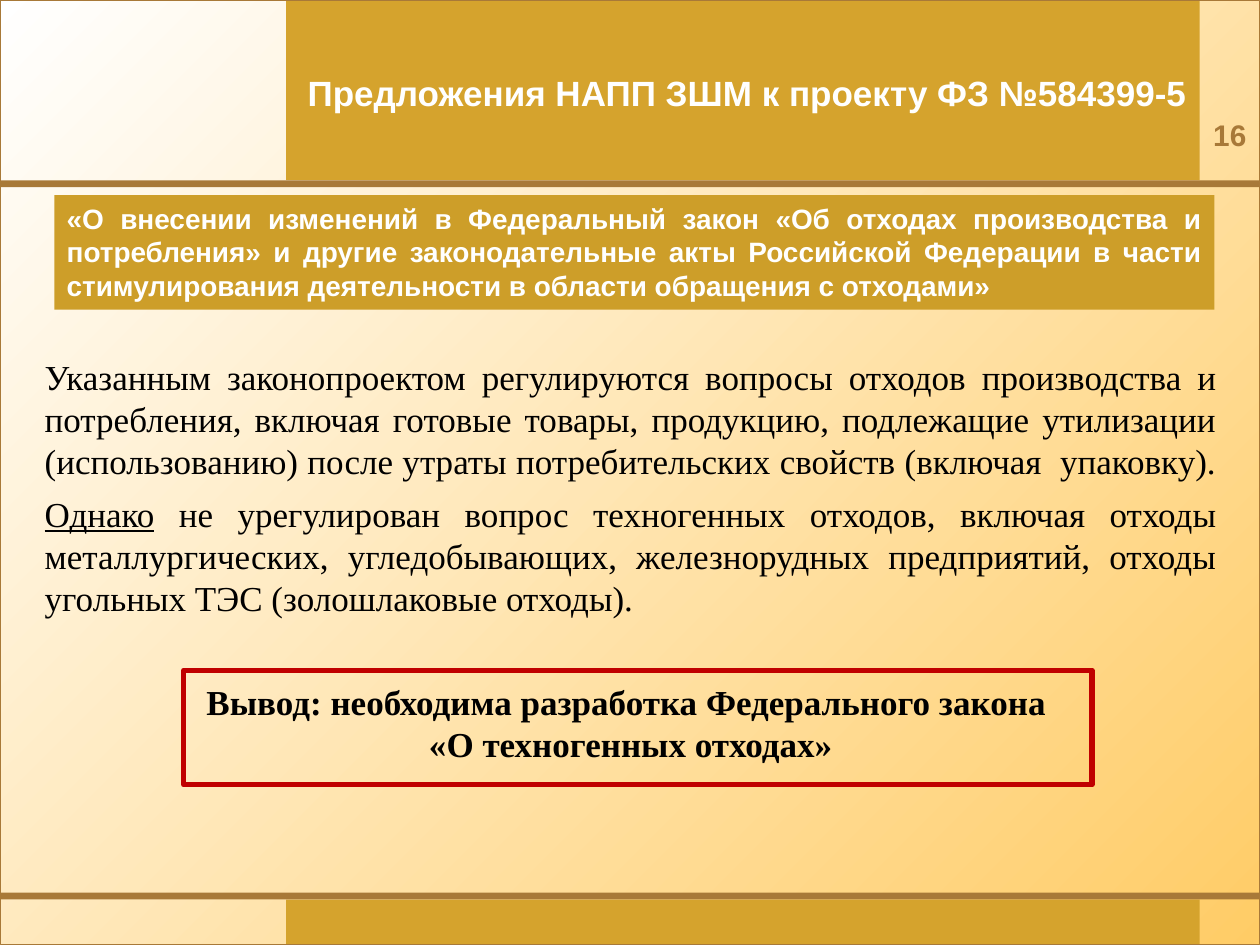
from lxml import etree
from pptx import Presentation
from pptx.dml.color import RGBColor
from pptx.enum.shapes import MSO_SHAPE
from pptx.enum.text import MSO_ANCHOR, MSO_AUTO_SIZE, PP_ALIGN
from pptx.oxml.ns import qn
from pptx.util import Pt

RECT = MSO_SHAPE.RECTANGLE
TOP, MIDDLE, BOTTOM = MSO_ANCHOR.TOP, MSO_ANCHOR.MIDDLE, MSO_ANCHOR.BOTTOM
CENTER, JUSTIFY = PP_ALIGN.CENTER, PP_ALIGN.JUSTIFY
NO_FIT = MSO_AUTO_SIZE.NONE

WIDTH, HEIGHT = 720, 540
GOLD, BROWN, OCHRE = "D5A32D", "A87938", "CD9E29"
WHITE, BLACK, RED = "FFFFFF", "000000", "C00000"
SANS, SERIF = "Arial", "Times New Roman"


def rgb(value):
    return RGBColor.from_string(value)


class Deck:
    """Hold the style and the current slide, and add each kind of element."""

    def __init__(self):
        self.prs = Presentation()
        self.prs.slide_width, self.prs.slide_height = Pt(WIDTH), Pt(HEIGHT)
        self.s = self.prs.slides.add_slide(self.prs.slide_layouts[1])

    def background(self, colors, angle):
        fill = self.s.background.fill
        fill.gradient()
        fill.gradient_angle = angle
        for stop, color, position in zip(fill.gradient_stops, colors, (0, 1)):
            stop.color.rgb, stop.position = rgb(color), position

    def rect(self, box, fill=None, line=None, width=1):
        sp = self.s.shapes.add_shape(RECT, *map(Pt, box))
        sp.shadow.inherit = False
        if fill:
            sp.fill.solid()
            sp.fill.fore_color.rgb = rgb(fill)
        else:
            sp.fill.background()
        if line:
            sp.line.color.rgb, sp.line.width = rgb(line), Pt(width)
        else:
            sp.line.fill.background()
        return sp

    def placeholder(self, index, box):
        sp = self.s.placeholders[index]
        for name, value in zip(("left", "top", "width", "height"), box):
            setattr(sp, name, Pt(value))
        self.s.shapes._spTree.append(sp._element)
        return sp

    def text_box(self, box):
        return self.s.shapes.add_textbox(*map(Pt, box))

    def set_text(self, sp, paragraphs, font, anchor=MIDDLE, margins=(6, 3, 6, 3)):
        tf = sp.text_frame
        tf.word_wrap, tf.auto_size, tf.vertical_anchor = True, NO_FIT, anchor
        for side, value in zip(("left", "top", "right", "bottom"), margins):
            setattr(tf, f"margin_{side}", Pt(value))
        for i, (runs, layout) in enumerate(paragraphs):
            p = tf.add_paragraph() if i else tf.paragraphs[0]
            pPr = p._p.get_or_add_pPr()
            pPr.set("marL", "0")
            pPr.set("indent", "0")
            etree.SubElement(pPr, qn("a:buNone"))
            for name, value in {"space_before": Pt(0), **layout}.items():
                setattr(p, name, value)
            for text, extra in runs:
                r = p.add_run()
                r.text = text
                style = {**font, **extra}
                r.font.color.rgb = rgb(style.pop("color"))
                for name, value in style.items():
                    setattr(r.font, name, value)


def main():
    deck = Deck()
    deck.background((WHITE, "FFCC66"), 315)
    for box, color in (
        ((163.5, 514, 522, 26), GOLD),
        ((163.5, 0, 522, 103), GOLD),
        ((0, 103, WIDTH, 4), BROWN),
        ((0, 510, WIDTH, 4), BROWN),
    ):
        deck.rect(box, color)
    deck.rect((0, 0, WIDTH, HEIGHT), line=BROWN, width=0.5)

    heading = {"name": SANS, "size": Pt(20), "bold": True, "color": WHITE}
    centered = {"alignment": CENTER}
    title = deck.placeholder(0, (167, 0, 520, 106))
    deck.set_text(title, [([("Предложения НАПП ЗШМ к проекту ФЗ №584399-5", {})], centered)], heading)

    number = deck.text_box((685.5, 64, 34.5, 26))
    deck.set_text(number, [([("16", {})], centered)],
                  {**heading, "size": Pt(17), "color": BROWN}, BOTTOM)

    justified = {"alignment": JUSTIFY, "space_after": Pt(6)}
    bold = {"bold": True}
    body = deck.placeholder(1, (19.5, 199.5, 683, 243))
    deck.set_text(body, [
        ([("Указанным законопроектом регулируются вопросы отходов производства "
           "и потребления, включая готовые товары, продукцию, подлежащие "
           "утилизации (использованию) после утраты потребительских свойств "
           "(включая  упаковку). ", {})], justified),
        ([("Однако", {"underline": True}),
          (" не урегулирован вопрос техногенных отходов, включая отходы "
           "металлургических, угледобывающих, железнорудных предприятий, "
           "отходы угольных ТЭС (золошлаковые отходы).", {})], justified),
        ([("Вывод: необходима разработка Федерального закона ", bold)],
         {**centered, "space_before": Pt(29.5)}),
        ([("«О техногенных отходах»", bold)], centered),
    ], {"name": SERIF, "size": Pt(20), "color": BLACK}, TOP, (6, 3.6, 7.2, 3.6))

    banner = deck.rect((31, 111.5, 663, 65.5), OCHRE)
    deck.set_text(banner, [
        ([("«О внесении изменений в Федеральный закон «Об отходах производства "
           "и потребления» и другие законодательные акты Российской Федерации "
           "в части стимулирования деятельности в области обращения с "
           "отходами»", {})], {"alignment": JUSTIFY}),
    ], {**heading, "size": Pt(16)}, TOP, (7.2, 3.6, 7.2, 3.6))

    deck.rect((105, 383, 519, 65.5), line=RED, width=3)
    deck.prs.save("out.pptx")


if __name__ == "__main__":
    main()
